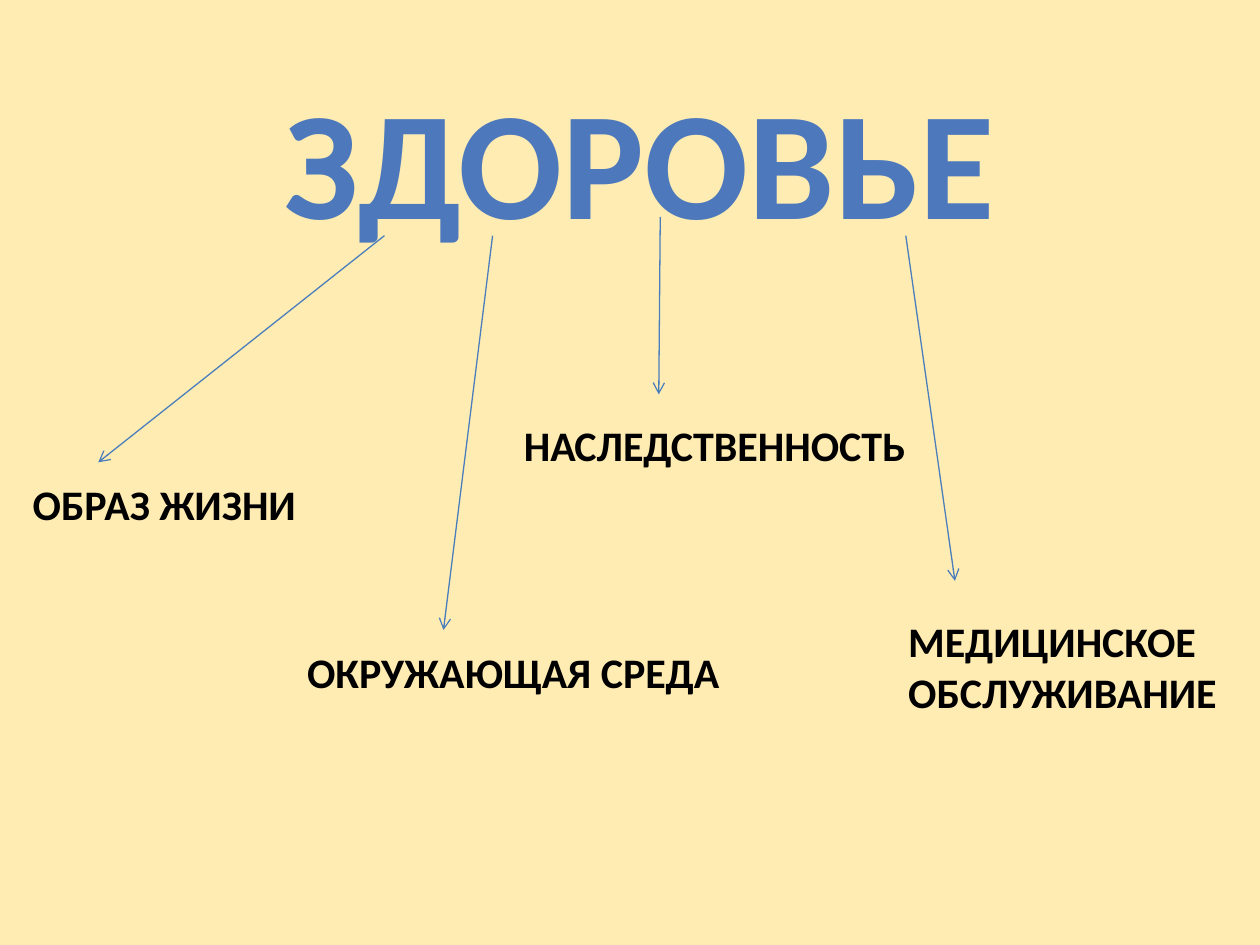
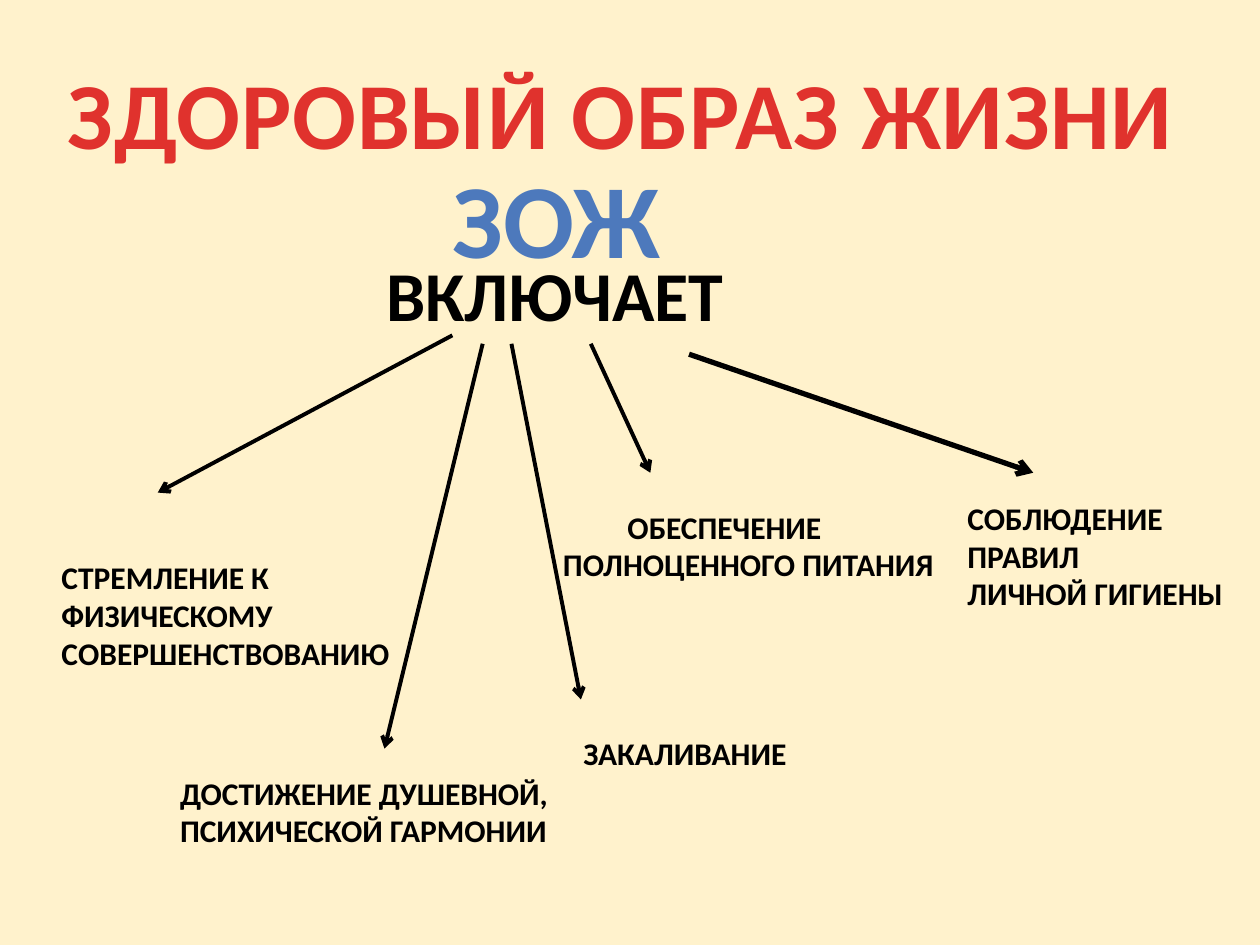
from lxml.etree import SubElement
from pptx import Presentation
from pptx.dml.color import RGBColor
from pptx.enum.shapes import MSO_CONNECTOR
from pptx.enum.text import MSO_ANCHOR, MSO_AUTO_SIZE, PP_ALIGN
from pptx.oxml.ns import qn
from pptx.util import Cm, Pt

FONT = "Calibri"
BLACK, BLUE, RED, ARROW_BLUE = "000000", "4D79BC", "E0322D", "4B7EBC"
TITLE_ONLY = 5


def color(hex_code):
    return RGBColor.from_string(hex_code)


class Deck:
    """Holds the shared style and the slide being filled."""

    def __init__(self):
        self.presentation = Presentation()
        self.presentation.slide_width = Cm(25.4)
        self.presentation.slide_height = Cm(19.05)
        self.slide = None

    def new_slide(self, background):
        layout = self.presentation.slide_layouts[TITLE_ONLY]
        self.slide = self.presentation.slides.add_slide(layout)
        fill = self.slide.background.fill
        fill.solid()
        fill.fore_color.rgb = color(background)

    def set_text(self, frame, lines, size, hue, align, wrap):
        frame.text = "\n".join(lines)
        frame.word_wrap = wrap
        frame.vertical_anchor = MSO_ANCHOR.TOP
        frame.auto_size = MSO_AUTO_SIZE.SHAPE_TO_FIT_TEXT
        for paragraph in frame.paragraphs:
            paragraph.alignment = align
            font = paragraph.font
            font.name, font.size, font.bold = FONT, Pt(size), True
            font.color.rgb = color(hue)

    def title(self, text, box, size, hue, wrap=True):
        heading = self.slide.shapes.title
        heading.left, heading.top, heading.width, heading.height = map(Cm, box)
        self.set_text(heading.text_frame, [text], size, hue, PP_ALIGN.CENTER, wrap)

    def label(self, lines, box, size, hue=BLACK, align=PP_ALIGN.LEFT,
              wrap=False, first_indent=0):
        frame = self.slide.shapes.add_textbox(*map(Cm, box)).text_frame
        self.set_text(frame, lines, size, hue, align, wrap)
        if first_indent:
            properties = frame.paragraphs[0]._p.get_or_add_pPr()
            properties.set("indent", str(Cm(first_indent)))

    def arrow(self, start, end, hue, weight):
        connector = self.slide.shapes.add_connector(
            MSO_CONNECTOR.STRAIGHT, *map(Cm, start + end))
        connector.line.color.rgb = color(hue)
        connector.line.width = Pt(weight)
        properties = connector._element.spPr
        SubElement(properties.get_or_add_ln(), qn("a:tailEnd"), type="arrow")
        SubElement(properties, qn("a:effectLst"))


def health_factors(deck):
    deck.new_slide("FFECB3")
    deck.title("ЗДОРОВЬЕ", (5.16, 1.19, 15.47, 4.01), 88, BLUE)

    # Factors: arrow start, arrow end, label box, label lines
    factors = [
        ((7.75, 4.75), (1.98, 9.32), (0.41, 9.53, 5.87, 1.27), ["ОБРАЗ ЖИЗНИ"]),
        ((9.93, 4.75), (8.94, 12.7), (5.94, 12.9, 8.89, 1.27),
         ["ОКРУЖАЮЩАЯ СРЕДА"]),
        ((13.31, 4.37), (13.28, 7.95), (10.31, 8.33, 8.28, 1.27),
         ["НАСЛЕДСТВЕННОСТЬ"]),
        ((18.26, 4.75), (19.25, 11.71), (18.06, 12.29, 6.81, 2.31),
         ["МЕДИЦИНСКОЕ", "ОБСЛУЖИВАНИЕ"]),
    ]
    for start, end, box, lines in factors:
        deck.arrow(start, end, ARROW_BLUE, 0.75)
        deck.label(lines, box, 24)


def healthy_lifestyle(deck):
    deck.new_slide("FFF2CC")
    deck.title("ЗДОРОВЫЙ ОБРАЗ ЖИЗНИ", (0.99, 0.99, 23.06, 2.57), 54, RED, False)
    for run in deck.slide.shapes.title.text_frame.paragraphs[0].runs:
        run._r.get_or_add_rPr().set("spc", "50")

    # Abbreviation and lead-in
    deck.label(["ЗОЖ"], (7.54, 2.97, 7.34, 2.82), 60, BLUE, PP_ALIGN.CENTER, True)
    deck.label(["ВКЛЮЧАЕТ"], (7.54, 4.95, 7.37, 1.96), 40)

    # Components: arrow start, end, weight, label box, first-line indent, lines
    components = [
        ((9.12, 6.76), (3.18, 9.93), 2.25, (0.99, 11.13, 7.19, 2.57), 0,
         ["СТРЕМЛЕНИЕ К", "ФИЗИЧЕСКОМУ", "СОВЕРШЕНСТВОВАНИЮ"]),
        ((9.73, 6.93), (7.75, 15.09), 2.25, (3.38, 15.47, 8, 1.8), 0,
         ["ДОСТИЖЕНИЕ ДУШЕВНОЙ,", "ПСИХИЧЕСКОЙ ГАРМОНИИ"]),
        ((11.91, 6.93), (13.11, 9.53), 2.25, (11.1, 10.11, 8.08, 1.8), 1.3,
         ["ОБЕСПЕЧЕНИЕ", "ПОЛНОЦЕННОГО ПИТАНИЯ"]),
        ((13.89, 7.14), (20.83, 9.53), 3, (19.25, 9.93, 5.72, 2.57), 0,
         ["СОБЛЮДЕНИЕ", "ПРАВИЛ", "ЛИЧНОЙ ГИГИЕНЫ"]),
        ((10.31, 6.93), (11.71, 14.1), 2.25, (11.51, 14.68, 4.65, 1.02), 0,
         ["ЗАКАЛИВАНИЕ"]),
    ]
    for start, end, weight, box, indent, lines in components:
        deck.arrow(start, end, BLACK, weight)
        deck.label(lines, box, 18, first_indent=indent)


def main():
    deck = Deck()
    health_factors(deck)
    healthy_lifestyle(deck)
    deck.presentation.save("out.pptx")


if __name__ == "__main__":
    main()
